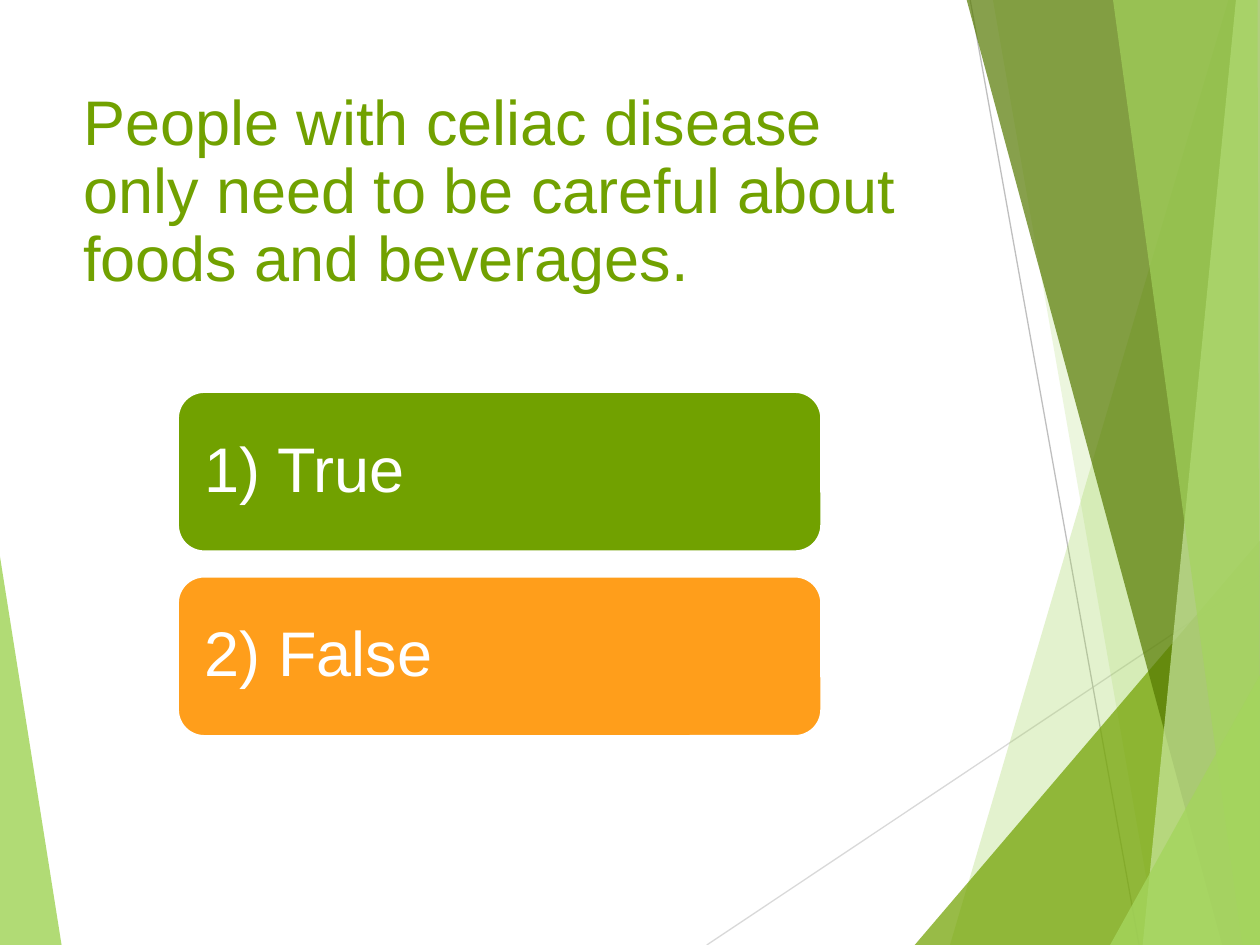
"""Build a true-or-false quiz slide with a faceted green border."""
from typing import NamedTuple

from lxml import etree
from pptx import Presentation
from pptx.dml.color import RGBColor
from pptx.enum.shapes import MSO_CONNECTOR as Connector, MSO_SHAPE as Preset
from pptx.enum.text import MSO_ANCHOR as Anchor, MSO_AUTO_SIZE as AutoSize, PP_ALIGN as Align
from pptx.oxml.ns import qn
from pptx.slide import Slide
from pptx.text.text import TextFrame
from pptx.util import Pt

Point = tuple[float, float]
GREEN, LIME, ORANGE, WHITE = "71A100", "A4D55D", "FF9E1B", "FFFFFF"
WIDTH, HEIGHT = 720, 540


class Facet(NamedTuple):
    color: str
    opacity: int
    points: list[Point]


class Ray(NamedTuple):
    color: str
    start: Point
    end: Point


class Answer(NamedTuple):
    text: str
    color: str


LEFT_FACET = Facet(LIME, 85, [(0, 318), (35.2, HEIGHT), (0, HEIGHT)])
RAYS = [
    Ray("D9D9D9", (403.9, HEIGHT), (WIDTH, 329)),
    Ray("BFBFBF", (554.4, 0), (650.9, HEIGHT)),
]
RIGHT_FACETS = [
    Facet(LIME, 30, [(702, 0), (542.9, HEIGHT), (WIDTH, HEIGHT), (WIDTH, 0)]),
    Facet(LIME, 20, [(567.4, 0), (661.7, HEIGHT), (WIDTH, HEIGHT), (WIDTH, 0)]),
    Facet(GREEN, 72, [(522.7, HEIGHT), (WIDTH, 308.9), (WIDTH, HEIGHT)]),
    Facet("557900", 70, [(552.4, 0), (698.4, HEIGHT), (WIDTH, HEIGHT), (WIDTH, 0)]),
    Facet("C8E69E", 70, [(706.3, 0), (653, HEIGHT), (WIDTH, HEIGHT), (WIDTH, 0)]),
    Facet(LIME, 65, [(636, 0), (709.9, HEIGHT), (WIDTH, HEIGHT), (718.6, 0)]),
    Facet(LIME, 80, [(634.3, HEIGHT), (WIDTH, 385.6), (WIDTH, HEIGHT)]),
]
ANSWERS = [Answer("1) True", GREEN), Answer("2) False", ORANGE)]


def rgb(color: str) -> RGBColor:
    """Turn a hex string into a colour."""
    return RGBColor.from_string(color)


def draw_facet(page: Slide, facet: Facet) -> None:
    """Draw one translucent polygon."""
    first, *rest = [(Pt(x), Pt(y)) for x, y in facet.points]
    builder = page.shapes.build_freeform(*first)
    builder.add_line_segments(rest, close=True)
    shape = builder.convert_to_shape()
    shape.shadow.inherit = False
    shape.fill.solid()
    shape.fill.fore_color.rgb = rgb(facet.color)
    shape.line.fill.background()
    color = shape.fill._xPr.find(qn("a:solidFill"))[0]
    etree.SubElement(color, qn("a:alpha"), val=str(facet.opacity * 1000))


def draw_ray(page: Slide, ray: Ray) -> None:
    """Draw one thin grey line."""
    ends = [Pt(value) for value in ray.start + ray.end]
    line = page.shapes.add_connector(Connector.STRAIGHT, *ends)
    line.line.color.rgb = rgb(ray.color)
    line.line.width = Pt(0.75)
    etree.SubElement(line._element.spPr, qn("a:effectLst"))


def write(frame: TextFrame, text: str, color: str, anchor: Anchor) -> None:
    """Fill a frame with one left-aligned paragraph of large text."""
    frame.text = text
    frame.word_wrap = True
    frame.auto_size = AutoSize.NONE
    frame.vertical_anchor = anchor
    para = frame.paragraphs[0]
    para.alignment = Align.LEFT
    para.line_spacing = 0.9
    font = para.runs[0].font
    font.name, font.size, font.color.rgb = "Arial", Pt(36), rgb(color)


def draw_answer(page: Slide, answer: Answer, top: float) -> None:
    """Draw one rounded answer box."""
    box = page.shapes.add_shape(
        Preset.ROUNDED_RECTANGLE, Pt(101.5), Pt(top), Pt(368), Pt(91.5))
    box.shadow.inherit = False
    box.fill.solid()
    box.fill.fore_color.rgb = rgb(answer.color)
    box.line.color.rgb = rgb(WHITE)
    box.line.width = Pt(1.5)
    write(box.text_frame, answer.text, WHITE, Anchor.MIDDLE)
    box.text_frame.margin_left = box.text_frame.margin_right = Pt(11)


def main() -> None:
    """Assemble and save the slide."""
    deck = Presentation()
    deck.slide_width, deck.slide_height = Pt(WIDTH), Pt(HEIGHT)
    page = deck.slides.add_slide(deck.slide_layouts[5])
    title = page.shapes.title
    title.left, title.top, title.width, title.height = Pt(40.3), Pt(48.2), Pt(502), Pt(132)
    write(title.text_frame,
          "People with celiac disease only need to be careful about foods and beverages.",
          GREEN, Anchor.TOP)
    draw_facet(page, LEFT_FACET)
    for ray in RAYS:
        draw_ray(page, ray)
    for facet in RIGHT_FACETS:
        draw_facet(page, facet)
    for index, answer in enumerate(ANSWERS):
        draw_answer(page, answer, 223.8 + index * 105.5)
    deck.save("out.pptx")


if __name__ == "__main__":
    main()
